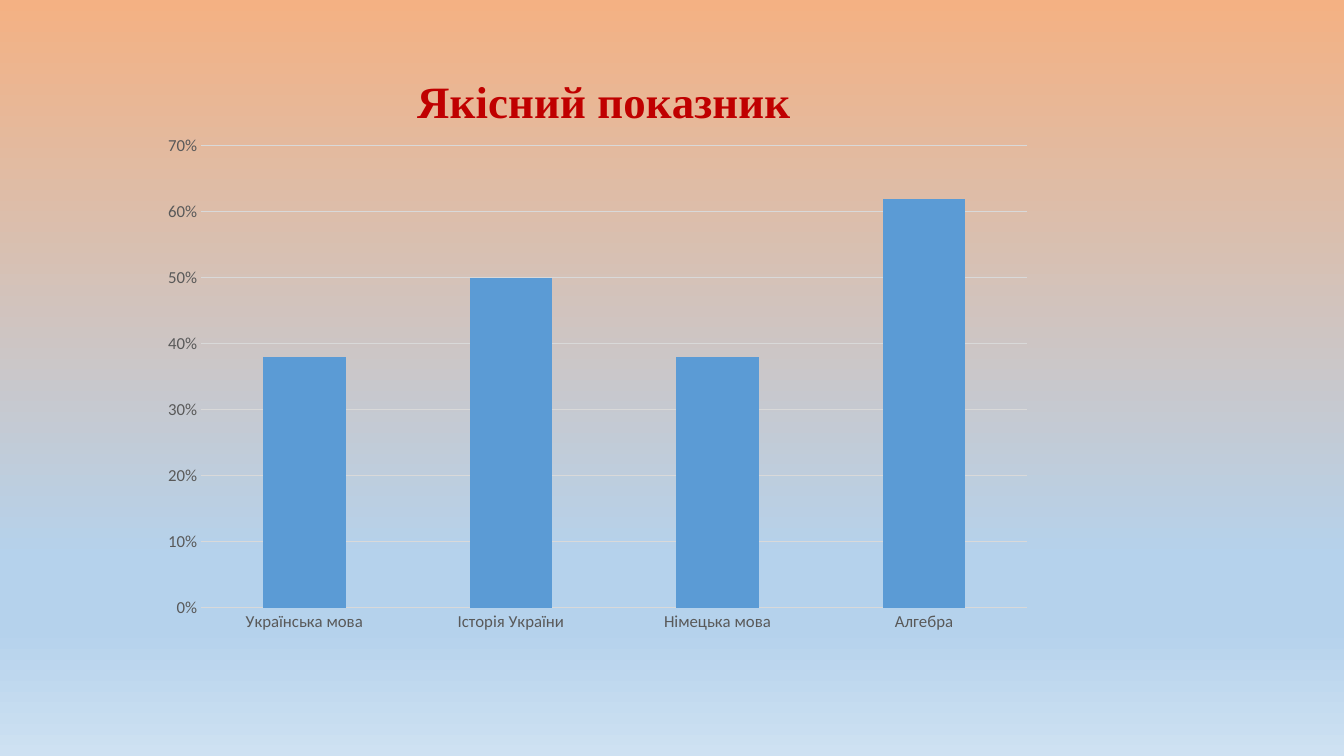
from dataclasses import dataclass
from typing import Any

import lxml.etree
import pptx
import pptx.chart.data
import pptx.dml.color
import pptx.enum.chart
import pptx.oxml.ns
import pptx.util


@dataclass(frozen=True)
class Theme:
    title: str = "C00000"
    label: str = "595959"
    grid: str = "D9D9D9"
    bar: str = "5B9BD5"
    title_font: str = "Times New Roman"
    label_font: str = "Calibri"
    title_size: float = 32
    label_size: float = 12
    grid_width: float = 0.75


@dataclass(frozen=True)
class Stop:
    percent: int
    color: str


@dataclass(frozen=True)
class Score:
    subject: str
    share: float


@dataclass(frozen=True)
class Box:
    """Left, top, width and height in percent of the parent's size."""
    x: float
    y: float
    w: float
    h: float


THEME = Theme()
SKY = [Stop(0, "F4B183"), Stop(74, "B5D2EC"), Stop(83, "B5D2EC"), Stop(100, "CEE1F2")]
SCORES = [
    Score("Українська мова", 0.38),
    Score("Історія України", 0.5),
    Score("Німецька мова", 0.38),
    Score("Алгебра", 0.62),
]
CHART = Box(11.1, 6.27, 66.69, 79.07)
PLOT = {"layoutTarget": "inner", "xMode": "edge", "yMode": "edge",
        "x": 0.0579, "y": 0.165, "w": 0.922, "h": 0.773}
TITLE = {"xMode": "edge", "yMode": "edge", "x": 0.29, "y": 0.03}


def rgb(color: str) -> pptx.dml.color.RGBColor:
    return pptx.dml.color.RGBColor.from_string(color)


def apply(target: Any, values: dict[str, Any]) -> None:
    for name, value in values.items():
        setattr(target, name, value)


def style_font(font: Any, name: str, size: float, color: str, bold: bool) -> None:
    apply(font, {"name": name, "size": pptx.util.Pt(size), "bold": bold})
    font.color.rgb = rgb(color)


def set_layout(parent: Any, values: dict[str, Any]) -> None:
    """Place a chart part by hand, in shares of the chart's size."""
    qn = pptx.oxml.ns.qn
    layout = parent.find(qn("c:layout"))
    if layout is None:
        layout = lxml.etree.Element(qn("c:layout"))
        parent.insert(0, layout)
    manual = lxml.etree.SubElement(layout, qn("c:manualLayout"))
    for name, value in values.items():
        lxml.etree.SubElement(manual, qn(f"c:{name}")).set("val", str(value))


def paint_background(s: Any, stops: list[Stop]) -> None:
    qn = pptx.oxml.ns.qn
    fill = s.background.fill
    fill.gradient()
    fill.gradient_angle = 270
    gs_list = next(s.element.iter(qn("a:gsLst")))
    for old in list(gs_list):
        gs_list.remove(old)
    for stop in stops:
        gs = lxml.etree.SubElement(gs_list, qn("a:gs"), pos=str(stop.percent * 1000))
        lxml.etree.SubElement(gs, qn("a:srgbClr"), val=stop.color)


def style_axis(axis: Any, gridlines: bool) -> None:
    none = pptx.enum.chart.XL_TICK_MARK.NONE
    apply(axis, {"major_tick_mark": none, "minor_tick_mark": none,
                 "has_major_gridlines": gridlines})
    axis.format.line.fill.background()
    style_font(axis.tick_labels.font, THEME.label_font, THEME.label_size, THEME.label, False)


def add_score_chart(prs: Any, s: Any, box: Box, scores: list[Score]) -> None:
    data = pptx.chart.data.CategoryChartData(number_format="0%")
    data.categories = [score.subject for score in scores]
    data.add_series("Series 1", [score.share for score in scores])
    width, height = prs.slide_width, prs.slide_height
    chart = s.shapes.add_chart(
        pptx.enum.chart.XL_CHART_TYPE.COLUMN_CLUSTERED,
        int(width * box.x / 100), int(height * box.y / 100),
        int(width * box.w / 100), int(height * box.h / 100), data).chart
    apply(chart, {"has_legend": False, "has_title": True})
    style_font(chart.font, THEME.label_font, THEME.label_size, THEME.label, False)

    tf = chart.chart_title.text_frame
    r = tf.paragraphs[0].add_run()
    r.text = "Якісний показник"
    style_font(r.font, THEME.title_font, THEME.title_size, THEME.title, True)
    set_layout(chart.chart_title.element, TITLE)
    set_layout(next(chart.element.iter(pptx.oxml.ns.qn("c:plotArea"))), PLOT)

    plot = chart.plots[0]
    apply(plot, {"gap_width": 150, "vary_by_categories": False})
    bars = plot.series[0].format.fill
    bars.solid()
    bars.fore_color.rgb = rgb(THEME.bar)

    style_axis(chart.category_axis, False)
    values = chart.value_axis
    style_axis(values, True)
    apply(values, {"minimum_scale": 0, "maximum_scale": 0.7, "major_unit": 0.1})
    apply(values.tick_labels, {"number_format": "0%", "number_format_is_linked": False})
    line = values.major_gridlines.format.line
    line.width = pptx.util.Pt(THEME.grid_width)
    line.color.rgb = rgb(THEME.grid)


def main() -> None:
    prs = pptx.Presentation()
    apply(prs, {"slide_width": pptx.util.Inches(13.33), "slide_height": pptx.util.Inches(7.5)})
    s = prs.slides.add_slide(prs.slide_layouts[6])
    paint_background(s, SKY)
    add_score_chart(prs, s, CHART, SCORES)
    prs.save("out.pptx")


if __name__ == "__main__":
    main()
